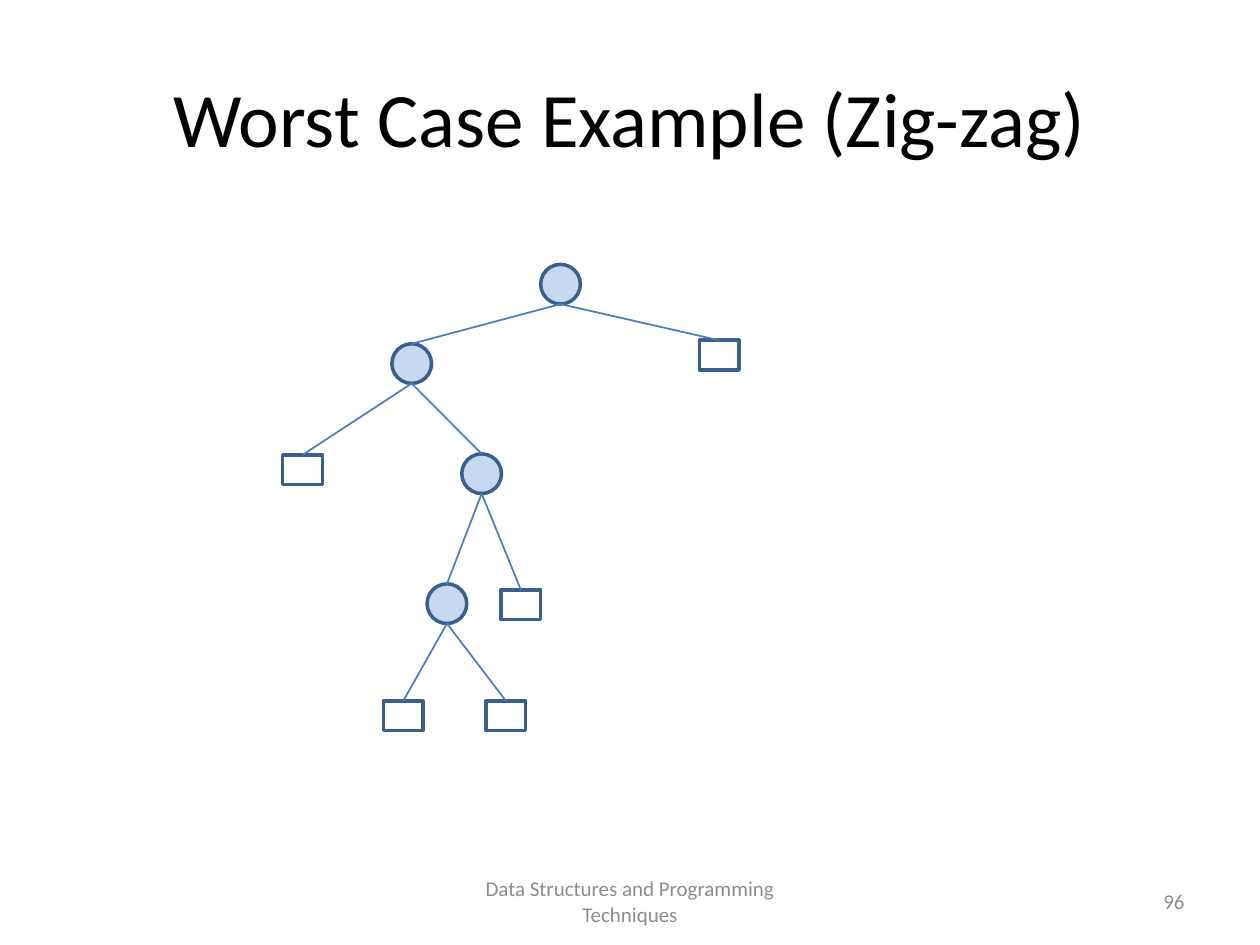
"""Build a slide showing a zig-zag binary tree as the worst case."""
from dataclasses import dataclass

import pptx
import pptx.dml.color
import pptx.enum.shapes
import pptx.enum.text
import pptx.oxml
import pptx.util

Cm = pptx.util.Cm
Pt = pptx.util.Pt
RGBColor = pptx.dml.color.RGBColor
Align = pptx.enum.text.PP_ALIGN
Shape = pptx.enum.shapes.MSO_SHAPE

BLACK = RGBColor(0x00, 0x00, 0x00)
GREY = RGBColor(0x8C, 0x8C, 0x8C)
PALE = RGBColor(0xC6, 0xD9, 0xF1)
NAVY = RGBColor(0x3A, 0x5F, 0x8C)
BLUE = RGBColor(0x4B, 0x7E, 0xBC)

WIDTH = 0.8
HEIGHT = {True: 0.8, False: 0.6}


@dataclass(frozen=True)
class Node:
    name: str
    mid: float
    top: float
    inner: bool = False
    parent: str = ""


TREE = [
    Node("root", 11.3, 5.33, True),
    Node("left", 8.3, 6.93, True, "root"),
    Node("root leaf", 14.5, 6.86, False, "root"),
    Node("left leaf", 6.1, 9.17, False, "left"),
    Node("zag", 9.71, 9.15, True, "left"),
    Node("low", 9.01, 11.77, True, "zag"),
    Node("zag leaf", 10.5, 11.89, False, "zag"),
    Node("low left", 8.13, 14.13, False, "low"),
    Node("low right", 10.2, 14.13, False, "low"),
]


def write(slide, text: str, *, left: float, top: float, width: float,
          height: float, size: float, color: RGBColor, align: Align) -> None:
    box = slide.shapes.add_textbox(Cm(left), Cm(top), Cm(width), Cm(height))
    frame = box.text_frame
    frame.word_wrap = True
    frame.vertical_anchor = pptx.enum.text.MSO_ANCHOR.MIDDLE
    para = frame.paragraphs[0]
    para.alignment = align
    run = para.add_run()
    run.text = text
    run.font.name = "Calibri"
    run.font.size = Pt(size)
    run.font.color.rgb = color


def draw(slide, node: Node):
    kind = Shape.OVAL if node.inner else Shape.RECTANGLE
    shape = slide.shapes.add_shape(
        kind, Cm(node.mid - WIDTH / 2), Cm(node.top),
        Cm(WIDTH), Cm(HEIGHT[node.inner]))
    shape.shadow.inherit = False
    if node.inner:
        shape.fill.solid()
        shape.fill.fore_color.rgb = PALE
    else:
        shape.fill.background()
    shape.line.color.rgb = NAVY
    shape.line.width = Pt(2)
    return shape


def link(slide, upper: Node, lower: Node, shape) -> None:
    line = slide.shapes.add_connector(
        pptx.enum.shapes.MSO_CONNECTOR.STRAIGHT,
        Cm(upper.mid), Cm(upper.top + HEIGHT[upper.inner]),
        Cm(lower.mid), Cm(lower.top))
    line.end_connect(shape, 0)
    line.line.color.rgb = BLUE
    line.line.width = Pt(1)
    props = line._element.spPr
    props.append(props.makeelement(pptx.oxml.ns.qn("a:effectLst"), {}))


def main() -> None:
    deck = pptx.Presentation()
    deck.slide_width = Cm(25.4)
    deck.slide_height = Cm(19.05)
    slide = deck.slides.add_slide(deck.slide_layouts[6])
    write(slide, "Worst Case Example (Zig-zag)", left=1.27, top=0.76,
          width=22.86, height=3.18, size=44, color=BLACK, align=Align.CENTER)
    nodes = {node.name: node for node in TREE}
    shapes = {node.name: draw(slide, node) for node in TREE}
    for node in TREE:
        if node.parent:
            link(slide, nodes[node.parent], node, shapes[node.name])
    foot = dict(top=17.66, height=1.01, size=12, color=GREY)
    write(slide, "Data Structures and Programming Techniques",
          left=8.68, width=8.04, align=Align.CENTER, **foot)
    write(slide, "96", left=18.2, width=5.93, align=Align.RIGHT, **foot)
    deck.save("out.pptx")


if __name__ == "__main__":
    main()
